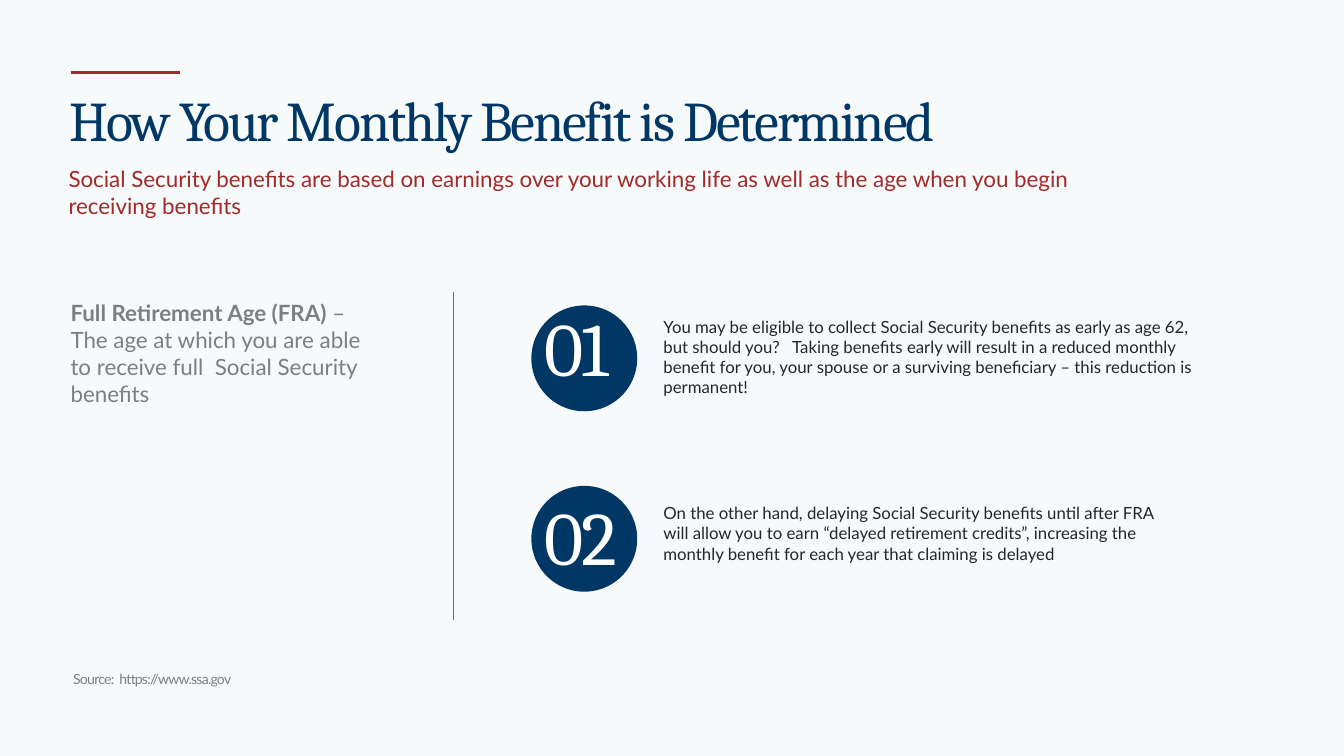
from pptx import Presentation, util as u
from pptx.dml.color import RGBColor
from pptx.enum import shapes, text
from pptx.oxml.xmlchemy import OxmlElement

NAVY = RGBColor(0x00, 0x37, 0x64)
RED = RGBColor(0xA1, 0x2B, 0x2A)
INK = RGBColor(0x24, 0x27, 0x2A)
GRAY = RGBColor(0x7D, 0x7E, 0x7F)
RULE_GRAY = RGBColor(0x70, 0x72, 0x71)
WHITE = RGBColor(0xFF, 0xFF, 0xFF)
PAPER = RGBColor(0xF6, 0xFA, 0xFB)
SERIF, SANS = "Cambria", "Lato"
WIDTH, HEIGHT = u.Inches(13.33), u.Inches(7.5)
COLUMNS, ROWS = 133.3, 75


class BenefitSlide:
    """Holds the slide and its style; places elements in columns and rows."""

    def __init__(self, presentation):
        layout = presentation.slide_layouts.get_by_name("Title Only")
        self.slide = presentation.slides.add_slide(layout)
        self.shapes = self.slide.shapes
        fill = self.slide.background.fill
        fill.solid()
        fill.fore_color.rgb = PAPER

    @staticmethod
    def x(column):
        return round(WIDTH * column / COLUMNS)

    @staticmethod
    def y(row):
        return round(HEIGHT * row / ROWS)

    def box(self, column, row, columns, rows):
        return self.x(column), self.y(row), self.x(columns), self.y(rows)

    def set_text(self, shape, words, size, color, font=SANS, lead="", spacing=0,
                 before=0, after=0, align=text.PP_ALIGN.LEFT,
                 anchor=text.MSO_ANCHOR.TOP, wrap=True):
        frame = shape.text_frame
        frame.margin_left = frame.margin_right = 0
        frame.margin_top = frame.margin_bottom = 0
        frame.auto_size = text.MSO_AUTO_SIZE.NONE
        frame.word_wrap = wrap
        frame.vertical_anchor = anchor
        paragraph = frame.paragraphs[0]
        paragraph.alignment = align
        paragraph.space_before, paragraph.space_after = u.Pt(before), u.Pt(after)
        for part, bold in ((lead, True), (words, False)):
            if not part:
                continue
            run = paragraph.add_run()
            run.text = part
            run.font.name, run.font.size = font, u.Pt(size)
            run.font.bold = bold
            run.font.color.rgb = color
            if spacing:
                run._r.get_or_add_rPr().set("spc", str(round(spacing * 100)))

    def title(self, area, words):
        title = self.shapes.title
        title.left, title.top, title.width, title.height = self.box(*area)
        self.set_text(title, words, 40, NAVY, SERIF, spacing=-1.5)

    def text(self, area, words, size, color, **style):
        self.set_text(self.shapes.add_textbox(*self.box(*area)),
                      words, size, color, **style)

    def line(self, start, end, color, width):
        line = self.shapes.add_connector(
            shapes.MSO_CONNECTOR.STRAIGHT,
            self.x(start[0]), self.y(start[1]), self.x(end[0]), self.y(end[1]))
        line.line.color.rgb = color
        line.line.width = u.Pt(width)
        line._element.spPr.append(OxmlElement("a:effectLst"))

    def circle(self, column, row, diameter):
        circle = self.shapes.add_shape(
            shapes.MSO_SHAPE.OVAL, *self.box(column, row, diameter, diameter))
        circle.shadow.inherit = False
        circle.fill.solid()
        circle.fill.fore_color.rgb = NAVY
        circle.line.fill.background()

    def point(self, number, words, circle_row, number_row, text_row, columns, rows):
        self.circle(52.7, circle_row, 10.5)
        self.text((54, number_row, 10.5, 9.1), number, 54, WHITE, font=SERIF,
                  spacing=-1.5, anchor=text.MSO_ANCHOR.MIDDLE)
        self.text((65.8, text_row, columns, rows), words, 12, INK, after=6.5)


def main():
    presentation = Presentation()
    presentation.slide_width, presentation.slide_height = WIDTH, HEIGHT
    page = BenefitSlide(presentation)

    # Heading
    page.line((7, 7.2), (17.9, 7.2), RED, 2.25)
    page.title((6.9, 8.5, 121, 6.7), "How Your Monthly Benefit is Determined")
    page.text((6.8, 16.4, 102.3, 3.7),
              "Social Security benefits are based on earnings over your working "
              "life as well as the age when you begin receiving benefits",
              16, RED, before=10)

    # Definition and divider
    page.text((7, 29.7, 29, 10.8),
              "– The age at which you are able to receive full  Social Security benefits",
              16, GRAY, lead="Full Retirement Age (FRA) ", after=6.5)
    page.line((45, 29), (45, 61.5), RULE_GRAY, 0.75)

    # Numbered points
    page.point("01", "You may be eligible to collect Social Security benefits as early "
               "as age 62, but should you?   Taking benefits early will result in a "
               "reduced monthly benefit for you, your spouse or a surviving "
               "beneficiary – this reduction is permanent!",
               30.3, 29.8, 31.4, 53, 8.1)
    page.point("02", "On the other hand, delaying Social Security benefits until after "
               "FRA will allow you to earn “delayed retirement credits”, increasing "
               "the monthly benefit for each year that claiming is delayed",
               48.2, 48.6, 49.9, 50.9, 6.1)

    # Source
    page.text((6.8, 66.5, 16.6, 1.7), "Source:  https://www.ssa.gov", 10, GRAY,
              spacing=-0.5, align=text.PP_ALIGN.CENTER, wrap=False)

    presentation.save("out.pptx")


if __name__ == "__main__":
    main()
